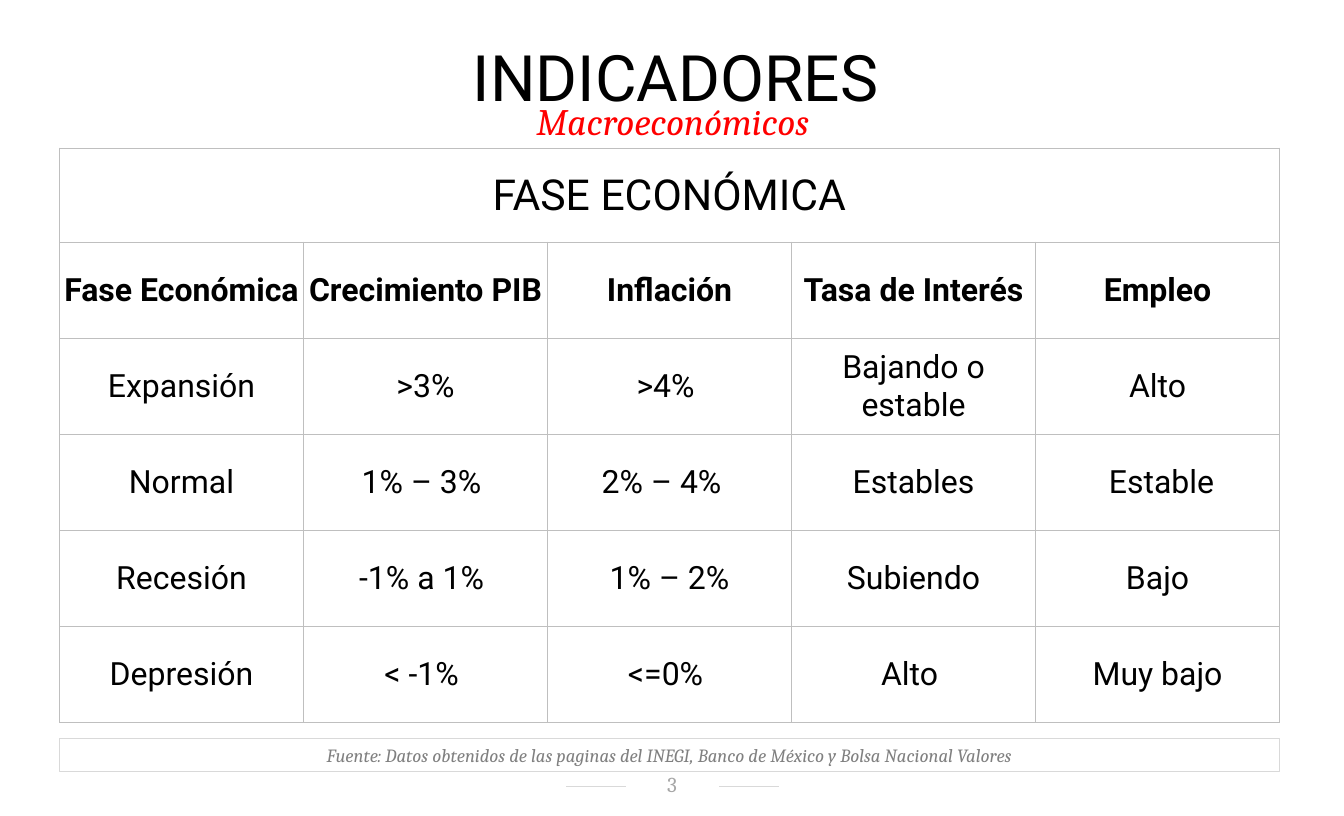
"""Build the slide of macroeconomic indicators by economic phase."""
from dataclasses import dataclass

from lxml.etree import SubElement
from pptx import Presentation
from pptx.dml.color import RGBColor as Rgb
from pptx.enum.shapes import MSO_CONNECTOR as Connector, MSO_SHAPE as Shape
from pptx.enum.text import MSO_ANCHOR as Anchor, MSO_AUTO_SIZE as AutoSize, PP_ALIGN as Align
from pptx.oxml.ns import qn
from pptx.util import Inches, Pt


@dataclass(frozen=True)
class TextStyle:
    """Font, size in points and colour of a piece of text."""
    font: str
    size: int
    color: str
    bold: bool = False
    italic: bool = False


@dataclass(frozen=True)
class Theme:
    """Colours, type sizes and line widths of the slide."""
    title = TextStyle("Roboto", 48, "000000")
    subtitle = TextStyle("Cambria", 28, "FF0000", italic=True)
    banner = TextStyle("Roboto", 32, "000000")
    heading = TextStyle("Roboto", 24, "000000", bold=True)
    body = TextStyle("Roboto", 24, "000000")
    source = TextStyle("Cambria", 14, "808080", italic=True)
    number = TextStyle("Cambria", 16, "A6A6A6")
    rule: str = "D9D9D9"
    border: str = "BFBFBF"
    thin: float = 0.5
    frame: float = 0.75


class PageBuilder:
    """Draws elements on one page, on a grid of 140 columns and 85 rows."""

    def __init__(self, deck, theme):
        """Add a blank page and derive the grid from the deck's size."""
        self.theme = theme
        self.page = deck.slides.add_slide(deck.slide_layouts[6])
        self.column = deck.slide_width / 140
        self.row = deck.slide_height / 85

    def place(self, left, top, width, height):
        """Turn grid units into lengths."""
        return (round(left * self.column), round(top * self.row),
                round(width * self.column), round(height * self.row))

    def set_text(self, frame, text, style):
        """Put one centred, styled paragraph into a text frame."""
        frame.text = text
        frame.word_wrap = True
        para = frame.paragraphs[0]
        para.alignment = Align.CENTER
        for span in para.runs:
            font = span.font
            font.name, font.size = style.font, Pt(style.size)
            font.bold, font.italic = style.bold, style.italic
            font.color.rgb = Rgb.from_string(style.color)
        return para

    def text(self, area, text, style, anchor=Anchor.TOP, inset=(0.1, 0.05), spacing=None):
        """Add a text box."""
        frame = self.page.shapes.add_textbox(*self.place(*area)).text_frame
        para = self.set_text(frame, text, style)
        para.line_spacing = spacing
        frame.auto_size = AutoSize.NONE
        frame.vertical_anchor = anchor
        frame.margin_left = frame.margin_right = Inches(inset[0])
        frame.margin_top = frame.margin_bottom = Inches(inset[1])

    def framed_text(self, area, text, style):
        """Add an outlined rectangle with text."""
        box = self.page.shapes.add_shape(Shape.RECTANGLE, *self.place(*area))
        box.shadow.inherit = False
        box.fill.background()
        box.line.color.rgb = Rgb.from_string(self.theme.rule)
        box.line.width = Pt(self.theme.frame)
        box.text_frame.vertical_anchor = Anchor.MIDDLE
        self.set_text(box.text_frame, text, style)

    def rule(self, left, top, width):
        """Add a thin horizontal line."""
        x, y, length, _ = self.place(left, top, width, 0)
        line = self.page.shapes.add_connector(Connector.STRAIGHT, x, y, x + length, y)
        line.line.color.rgb = Rgb.from_string(self.theme.rule)
        line.line.width = Pt(self.theme.thin)
        SubElement(line._element.spPr, qn("a:effectLst"))

    def border(self, cell):
        """Give a cell a thin line on all four sides."""
        properties = cell._tc.get_or_add_tcPr()
        for side in ("lnL", "lnR", "lnT", "lnB"):
            line = SubElement(properties, qn(f"a:{side}"), w=str(Pt(self.theme.thin)))
            fill = SubElement(line, qn("a:solidFill"))
            SubElement(fill, qn("a:srgbClr"), val=self.theme.border)

    def table(self, area, banner, rows):
        """Add a table with a banner across the top and a bold heading row."""
        columns = len(rows[0])
        grid = self.page.shapes.add_table(len(rows) + 1, columns, *self.place(*area)).table
        grid.first_row = grid.horz_banding = False
        grid.rows[0].height = Inches(0.98)
        content = [[banner] + [""] * (columns - 1)] + rows
        styles = [self.theme.banner, self.theme.heading]
        for index, values in enumerate(content):
            style = styles[index] if index < len(styles) else self.theme.body
            for cell, value in zip(grid.rows[index].cells, values):
                self.set_text(cell.text_frame, value, style)
                cell.vertical_anchor = Anchor.MIDDLE
                cell.margin_left = cell.margin_right = cell.margin_top = Inches(0.01)
                cell.margin_bottom = 0
                self.border(cell)
                cell.fill.background()
        grid.cell(0, 0).merge(grid.cell(0, columns - 1))


PHASES = [
    ["Fase Económica", "Crecimiento PIB", "Inflación", "Tasa de Interés", "Empleo"],
    ["Expansión", ">3%", ">4% ", "Bajando o estable", "Alto"],
    ["Normal", "1% – 3% ", "2% – 4%  ", "Estables", " Estable"],
    ["Recesión", "-1% a 1% ", "1% – 2%", "Subiendo", "Bajo"],
    ["Depresión", " < -1%  ", "<=0% ", "Alto ", "Muy bajo"],
]
SOURCE = ("Fuente: Datos obtenidos de las paginas del INEGI, "
          "Banco de México y Bolsa Nacional Valores")


def main():
    """Build and save the deck."""
    deck = Presentation()
    deck.slide_width, deck.slide_height = Inches(14), Inches(8.5)
    theme = Theme()
    page = PageBuilder(deck, theme)
    for left in (59, 74.9):
        page.rule(left, 81.9, 6.2)
    page.text((65.1, 80.4, 9.8, 2.6), "3", theme.number, Anchor.MIDDLE, (0.11, 0.03))
    page.text((0.6, 5.4, 139.6, 7), "INDICADORES", theme.title, inset=(0.13, 0.07), spacing=0.7)
    page.text((0.5, 9.7, 140, 5.7), "Macroeconómicos ", theme.subtitle)
    page.framed_text((6.2, 76.9, 127.1, 3.5), SOURCE, theme.source)
    page.table((6.2, 15.4, 127.1, 60), "FASE ECONÓMICA", PHASES)
    deck.save("out.pptx")


if __name__ == "__main__":
    main()
